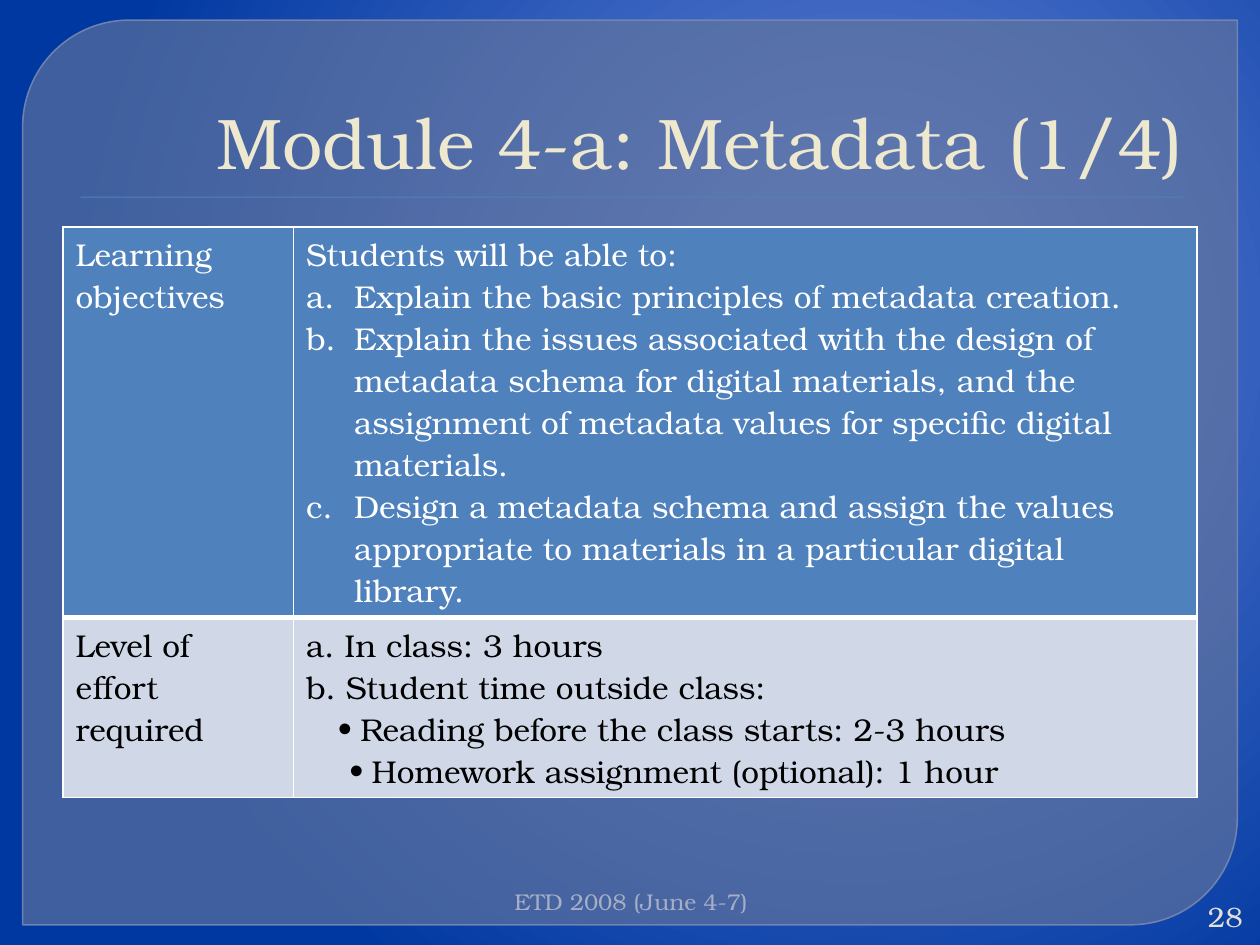
from collections import namedtuple
from dataclasses import dataclass

from lxml import etree
from pptx import Presentation
from pptx.dml.color import RGBColor
from pptx.enum.shapes import MSO_SHAPE
from pptx.enum.text import MSO_ANCHOR, PP_ALIGN
from pptx.oxml import parse_xml
from pptx.oxml.ns import nsdecls, qn
from pptx.util import Inches, Pt

RIGHT, LEFT = PP_ALIGN.RIGHT, PP_ALIGN.LEFT
TOP, MIDDLE, BOTTOM = MSO_ANCHOR.TOP, MSO_ANCHOR.MIDDLE, MSO_ANCHOR.BOTTOM
PANEL, RECTANGLE = MSO_SHAPE.ROUND_2_DIAG_RECTANGLE, MSO_SHAPE.RECTANGLE

GRID_COLUMNS, GRID_ROWS = 100, 75
LABEL_WIDTH, OBJECTIVES_HEIGHT = 18.3, 31
Box = namedtuple("Box", "left top width height")
Item = namedtuple("Item", "text margin hanging marker", defaults=(0, 0, None))


@dataclass(frozen=True)
class Theme:
    font: str = "TeX Gyre Bonum"
    title_size: float = 41
    body_size: float = 18
    number_size: float = 16
    footer_size: float = 13
    title: str = "EDE8CE"
    footer: str = "A7AFC5"
    number: str = "E3E1D7"
    white: str = "FFFFFF"
    black: str = "000000"
    accent: str = "4F81BD"
    band: str = "D0D8E8"
    panel: str = "63759D"
    panel_line: str = "7989B3"
    background: tuple = ((0, "6182D6"), (20, "5578CE"), (100, "0038A1"))


THEME = Theme()

OBJECTIVES = [
    Item("Students will be able to:"),
    *(Item(text, 0.38, 0.38, "letter") for text in (
        "Explain the basic principles of metadata creation.",
        "Explain the issues associated with the design of metadata schema for digital "
        "materials, and the assignment of metadata values for specific digital materials.",
        "Design a metadata schema and assign the values appropriate to materials in a "
        "particular digital library.",
    )),
]
EFFORT = [
    Item("a. In class: 3 hours"),
    Item("b. Student time outside class:"),
    Item("Reading before the class starts: 2-3 hours", 0.43, 0.18, "bullet"),
    Item("Homework assignment (optional): 1 hour", 0.52, 0.18, "bullet"),
]
TABLE_ROWS = [
    ([Item("Learning objectives")], OBJECTIVES, THEME.accent, THEME.white),
    ([Item("Level of effort required")], EFFORT, THEME.band, THEME.black),
]


def grid_lengths(box):
    return [Inches(value / 10) for value in box]


def style_paragraph(paragraph, size, color, alignment=LEFT):
    paragraph.alignment = alignment
    paragraph.font.name = THEME.font
    paragraph.font.size = Pt(size)
    paragraph.font.color.rgb = RGBColor.from_string(color)


def set_alpha(fill_parent, percent):
    color = fill_parent.find(qn("a:solidFill"))[0]
    etree.SubElement(color, qn("a:alpha")).set("val", str(percent * 1000))


def add_filled_shape(slide, preset, box, color):
    shape = slide.shapes.add_shape(preset, *grid_lengths(box))
    shape.shadow.inherit = False
    shape.fill.solid()
    shape.fill.fore_color.rgb = RGBColor.from_string(color)
    shape.line.fill.background()
    return shape


def add_text(slide, box, text, size, color, anchor):
    frame = slide.shapes.add_textbox(*grid_lengths(box)).text_frame
    frame.word_wrap = True
    frame.vertical_anchor = anchor
    frame.text = text
    style_paragraph(frame.paragraphs[0], size, color, RIGHT)


def paint_background(slide):
    fill = slide.background.fill
    fill.gradient()
    gradient = slide.element.find(".//" + qn("a:gradFill"))
    stops = "".join(
        f'<a:gs pos="{position * 1000}"><a:srgbClr val="{color}"/></a:gs>'
        for position, color in THEME.background
    )
    gradient.getparent().replace(gradient, parse_xml(
        f'<a:gradFill {nsdecls("a")} rotWithShape="1"><a:gsLst>{stops}</a:gsLst>'
        '<a:path path="circle"><a:fillToRect l="68000" t="35000" r="32000" b="65000"/>'
        "</a:path></a:gradFill>"
    ))


def add_panel(slide, box):
    panel = add_filled_shape(slide, PANEL, box, THEME.panel)
    panel.adjustments[0] = 0.118
    panel.adjustments[1] = 0
    panel.line.color.rgb = RGBColor.from_string(THEME.panel_line)
    panel.line.width = Pt(0.87)
    properties = panel.element.spPr
    set_alpha(properties, 65)
    set_alpha(properties.find(qn("a:ln")), 88)


def add_heading(slide, box, text):
    add_text(slide, box, text, THEME.title_size, THEME.title, BOTTOM)
    rule = Box(box.left + 1.4, box.top + box.height + 0.5, box.width - 2.5, 0.1)
    add_filled_shape(slide, RECTANGLE, rule, THEME.accent)


def add_marker(paragraph, item):
    properties = paragraph._p.get_or_add_pPr()
    properties.set("marL", str(Inches(item.margin)))
    properties.set("indent", str(-Inches(item.hanging)))
    etree.SubElement(properties, qn("a:buFont")).set("typeface", THEME.font)
    if item.marker == "letter":
        etree.SubElement(properties, qn("a:buAutoNum")).set("type", "alphaLcPeriod")
    else:
        etree.SubElement(properties, qn("a:buChar")).set("char", "•")
    properties.append(properties.find(qn("a:defRPr")))


def set_borders(cell, widths):
    properties = cell._tc.get_or_add_tcPr()
    for side, width in zip("LRTB", widths):
        properties.append(parse_xml(
            f'<a:ln{side} {nsdecls("a")} w="{Pt(width)}"><a:solidFill>'
            f'<a:srgbClr val="{THEME.white}"/></a:solidFill></a:ln{side}>'
        ))


def fill_cell(cell, items, fill, color, borders):
    set_borders(cell, borders)
    cell.fill.solid()
    cell.fill.fore_color.rgb = RGBColor.from_string(fill)
    frame = cell.text_frame
    for index, item in enumerate(items):
        paragraph = frame.add_paragraph() if index else frame.paragraphs[0]
        paragraph.text = item.text
        style_paragraph(paragraph, THEME.body_size, color)
        if item.marker:
            add_marker(paragraph, item)


def add_module_table(slide, box):
    table = slide.shapes.add_table(len(TABLE_ROWS), 2, *grid_lengths(box)).table
    for column, width in zip(table.columns, (LABEL_WIDTH, box.width - LABEL_WIDTH)):
        column.width = Inches(width / 10)
    for row, height in zip(table.rows, (OBJECTIVES_HEIGHT, box.height - OBJECTIVES_HEIGHT)):
        row.height = Inches(height / 10)
    for row, (label, details, fill, color) in enumerate(TABLE_ROWS):
        borders = (1, 1, 3, 1) if row else (1, 1, 1, 3)
        for column, items in enumerate((label, details)):
            fill_cell(table.cell(row, column), items, fill, color, borders)


def add_footer(slide, box, text, number):
    add_text(slide, Box(box.left, box.top, 46.1, 3), text,
             THEME.footer_size, THEME.footer, TOP)
    number_left = box.left + box.width - 5.1
    add_text(slide, Box(number_left, box.top + 1.2, 5.1, 3), number,
             THEME.number_size, THEME.number, MIDDLE)


def main():
    presentation = Presentation()
    presentation.slide_width = Inches(GRID_COLUMNS / 10)
    presentation.slide_height = Inches(GRID_ROWS / 10)
    slide = presentation.slides.add_slide(presentation.slide_layouts[6])
    paint_background(slide)
    add_panel(slide, Box(1.8, 1.6, 96.4, 71.8))
    add_heading(slide, Box(5, 2.8, 90, 12.3), "Module 4-a: Metadata (1/4)")
    add_module_table(slide, Box(5, 18, 90, 45.3))
    add_footer(slide, Box(14.2, 70, 85.4, 4.2), "ETD 2008 (June 4-7)", "28")
    presentation.save("out.pptx")


if __name__ == "__main__":
    main()
